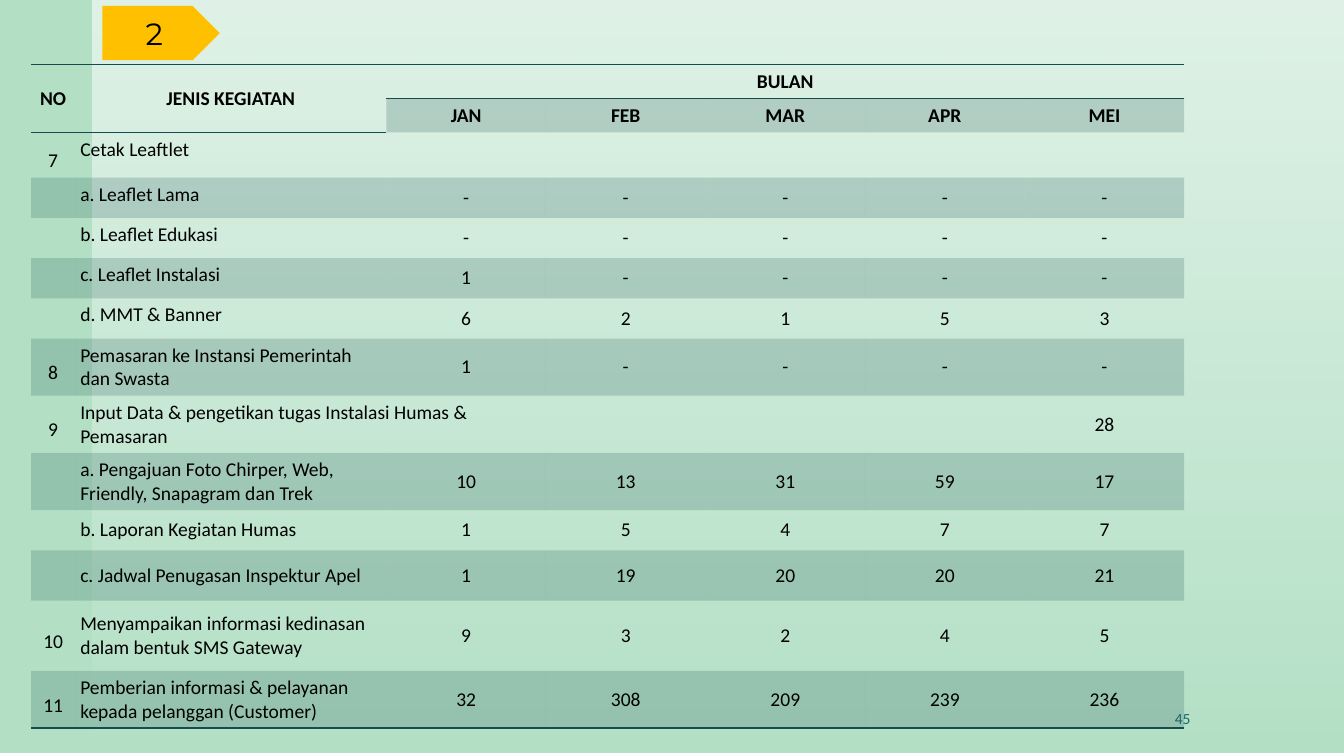
from dataclasses import dataclass

from lxml import etree
from pptx import Presentation
from pptx.dml.color import RGBColor
from pptx.enum.shapes import MSO_SHAPE
from pptx.enum.text import MSO_ANCHOR, PP_ALIGN
from pptx.oxml.ns import qn
from pptx.util import Inches, Pt

LEFT, CENTER, RIGHT = PP_ALIGN.LEFT, PP_ALIGN.CENTER, PP_ALIGN.RIGHT
TOP, MIDDLE = MSO_ANCHOR.TOP, MSO_ANCHOR.MIDDLE
RECTANGLE, PENTAGON = MSO_SHAPE.RECTANGLE, MSO_SHAPE.PENTAGON
NO_STYLE = "{2D5ABB26-0587-4C30-8999-92F81FD0307C}"


@dataclass(frozen=True)
class Theme:
    mint: RGBColor = RGBColor(0xB3, 0xE0, 0xC5)
    white: RGBColor = RGBColor(0xFF, 0xFF, 0xFF)
    black: RGBColor = RGBColor(0, 0, 0)
    teal: RGBColor = RGBColor(0x16, 0x4B, 0x4F)
    page_number: RGBColor = RGBColor(0x1F, 0x69, 0x6F)
    amber: RGBColor = RGBColor(0xFF, 0xC0, 0x00)
    body_font: str = "Calibri"
    badge_font: str = "Montserrat"
    body_size: float = 14
    page_size: float = 11.1
    badge_size: float = 22
    rule_width: float = 1


theme = Theme()


def write(frame, text, align, size=theme.body_size, font=theme.body_font, color=theme.black, bold=False):
    para = frame.paragraphs[0]
    para.alignment = align
    span = para.add_run()
    span.text = text
    span.font.size = Pt(size)
    span.font.name = font
    span.font.color.rgb = color
    span.font.bold = bold
    return para


def set_alpha(color_element, percent):
    etree.SubElement(color_element, qn("a:alpha")).set("val", str(percent * 1000))


deck = Presentation()
deck.slide_width, deck.slide_height = Inches(13.39), Inches(7.5)
page = deck.slides.add_slide(deck.slide_layouts[6])
page.background.fill.solid()
page.background.fill.fore_color.rgb = theme.mint

# Fading panel
panel = page.shapes.add_shape(RECTANGLE, Inches(0.92), 0, Inches(12.47), Inches(7.5))
panel.shadow.inherit = False
panel.line.fill.background()
panel.fill.gradient()
panel.fill.gradient_angle = 270
for stop, position in zip(panel.fill.gradient_stops, (0, 1)):
    stop.position = position
    stop.color.rgb = theme.white
for color_element, percent in zip(panel.element.spPr.iter(qn("a:srgbClr")), (60, 0)):
    set_alpha(color_element, percent)

# Page number
number_box = page.shapes.add_textbox(Inches(8.84), Inches(6.95), Inches(3.12), Inches(0.4))
number_box.text_frame.word_wrap = True
number_box.text_frame.vertical_anchor = MIDDLE
write(number_box.text_frame, "45", RIGHT, theme.page_size, color=theme.page_number)

# Activity table
BLANK, NONE = [""] * 5, ["-"] * 5
rows = [
    ("NO", "JENIS KEGIATAN", ["BULAN", "", "", "", ""], 0.34),
    ("", "", ["JAN", "FEB", "MAR", "APR", "MEI"], 0.34),
    ("7", "Cetak Leaftlet", BLANK, 0.45),
    ("", "a. Leaflet Lama", NONE, 0.4),
    ("", "b. Leaflet Edukasi", NONE, 0.4),
    ("", "c. Leaflet Instalasi", ["1", "-", "-", "-", "-"], 0.4),
    ("", "d. MMT & Banner", ["6", "2", "1", "5", "3"], 0.4),
    ("8", "Pemasaran ke Instansi Pemerintah dan Swasta", ["1", "-", "-", "-", "-"], 0.57),
    ("9", "Input Data & pengetikan tugas Instalasi Humas & Pemasaran", ["", "", "", "", "28"], 0.57),
    ("", "a. Pengajuan Foto Chirper, Web, Friendly, Snapagram dan Trek", ["10", "13", "31", "59", "17"], 0.57),
    ("", "b. Laporan Kegiatan Humas", ["1", "5", "4", "7", "7"], 0.4),
    ("", "c. Jadwal Penugasan Inspektur Apel", ["1", "19", "20", "20", "21"], 0.5),
    ("10", "Menyampaikan informasi kedinasan dalam bentuk SMS Gateway", ["9", "3", "2", "4", "5"], 0.7),
    ("11", "Pemberian informasi & pelayanan kepada pelanggan (Customer)", ["32", "308", "209", "239", "236"], 0.57),
]
column_widths = [0.44, 3.1] + [1.59] * 5
HEADER_ROWS, FIRST_MONTH, FIRST_MIDDLE_ROW = 2, 2, 7
last_row = len(rows) - 1

table_frame = page.shapes.add_table(
    len(rows), len(column_widths), Inches(0.31), Inches(0.64),
    Inches(sum(column_widths)), Inches(sum(row[3] for row in rows)))
table = table_frame.table
table.first_row = table.horz_banding = False
next(table_frame.element.iter(qn("a:tableStyleId"))).text = NO_STYLE
for column, width in zip(table.columns, column_widths):
    column.width = Inches(width)

for r, (number, activity, months, height) in enumerate(rows):
    table.rows[r].height = Inches(height)
    header = r < HEADER_ROWS
    for c, text in enumerate([number, activity, *months]):
        cell = table.cell(r, c)
        is_month = c >= FIRST_MONTH
        cell.margin_left = cell.margin_right = cell.margin_top = cell.margin_bottom = Inches(0.05)
        cell.vertical_anchor = MIDDLE if header or is_month or r >= FIRST_MIDDLE_ROW else TOP
        if text:
            align = LEFT if c == 1 and not header else CENTER
            para = write(cell.text_frame, text, align, bold=header)
            if c == 0 and not header:
                para.line_spacing = 1.5

        sides = []
        if r == 0:
            sides.append("a:lnT")
        if r == last_row or (r == 0 and is_month) or (header and not is_month):
            sides.append("a:lnB")
        properties = cell._tc.get_or_add_tcPr()
        for side in sides:
            rule = etree.SubElement(properties, qn(side), w=str(Pt(theme.rule_width)))
            rule_fill = etree.SubElement(rule, qn("a:solidFill"))
            etree.SubElement(rule_fill, qn("a:srgbClr"), val=str(theme.teal))

        if r % 2 and (is_month or not header):
            cell.fill.solid()
            cell.fill.fore_color.rgb = theme.teal
            set_alpha(properties.find(qn("a:solidFill")).find(qn("a:srgbClr")), 20)
        else:
            cell.fill.background()

for first, last in (((0, 0), (1, 0)), ((0, 1), (1, 1)), ((0, 2), (0, 6)), ((8, 1), (8, 2))):
    table.cell(*first).merge(table.cell(*last))

# Section badge
badge = page.shapes.add_shape(PENTAGON, Inches(1.02), Inches(0.06), Inches(1.17), Inches(0.54))
badge.shadow.inherit = False
badge.fill.solid()
badge.fill.fore_color.rgb = theme.amber
badge.line.fill.background()
badge.text_frame.vertical_anchor = MIDDLE
write(badge.text_frame, "2", CENTER, theme.badge_size, theme.badge_font)

deck.save("out.pptx")
